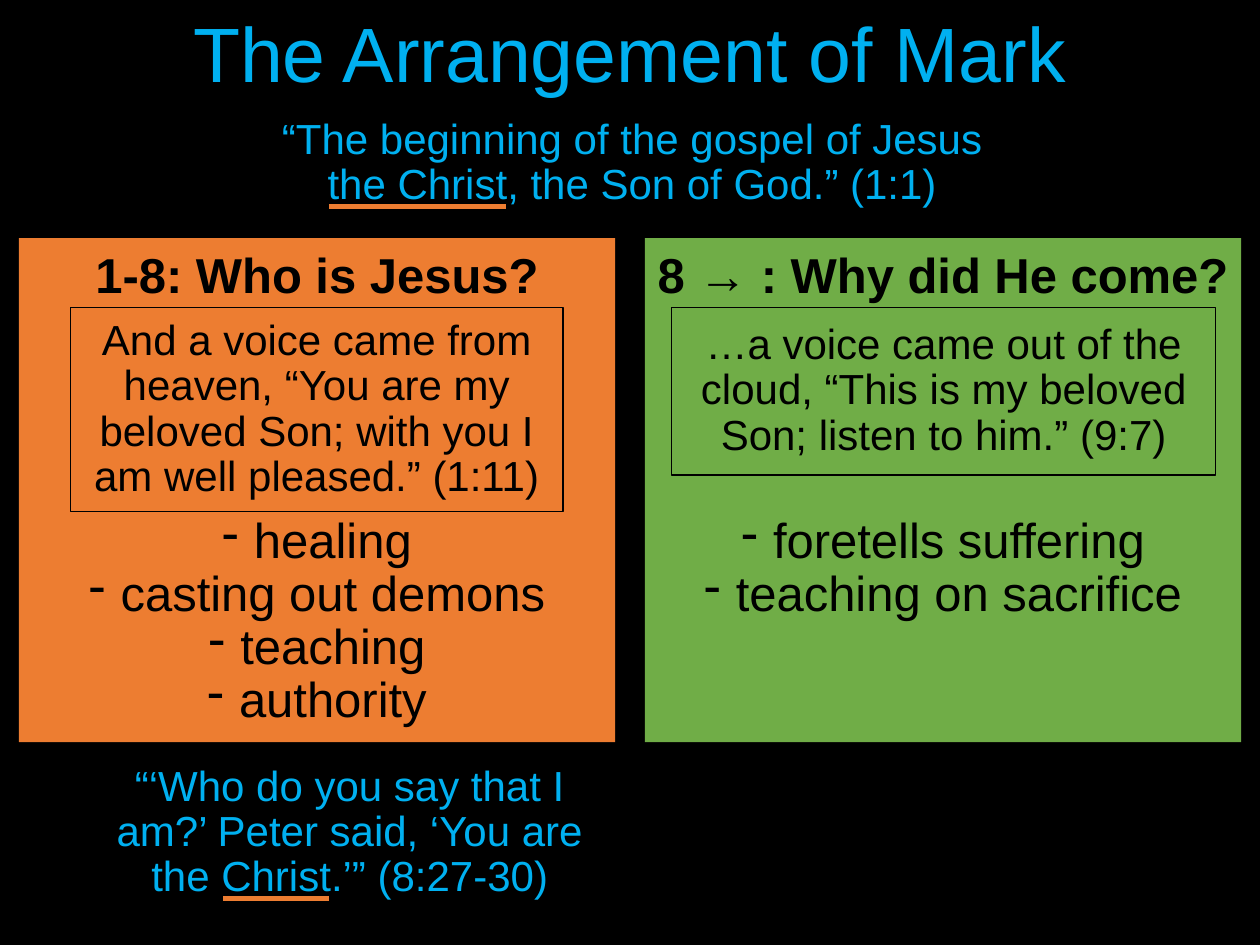
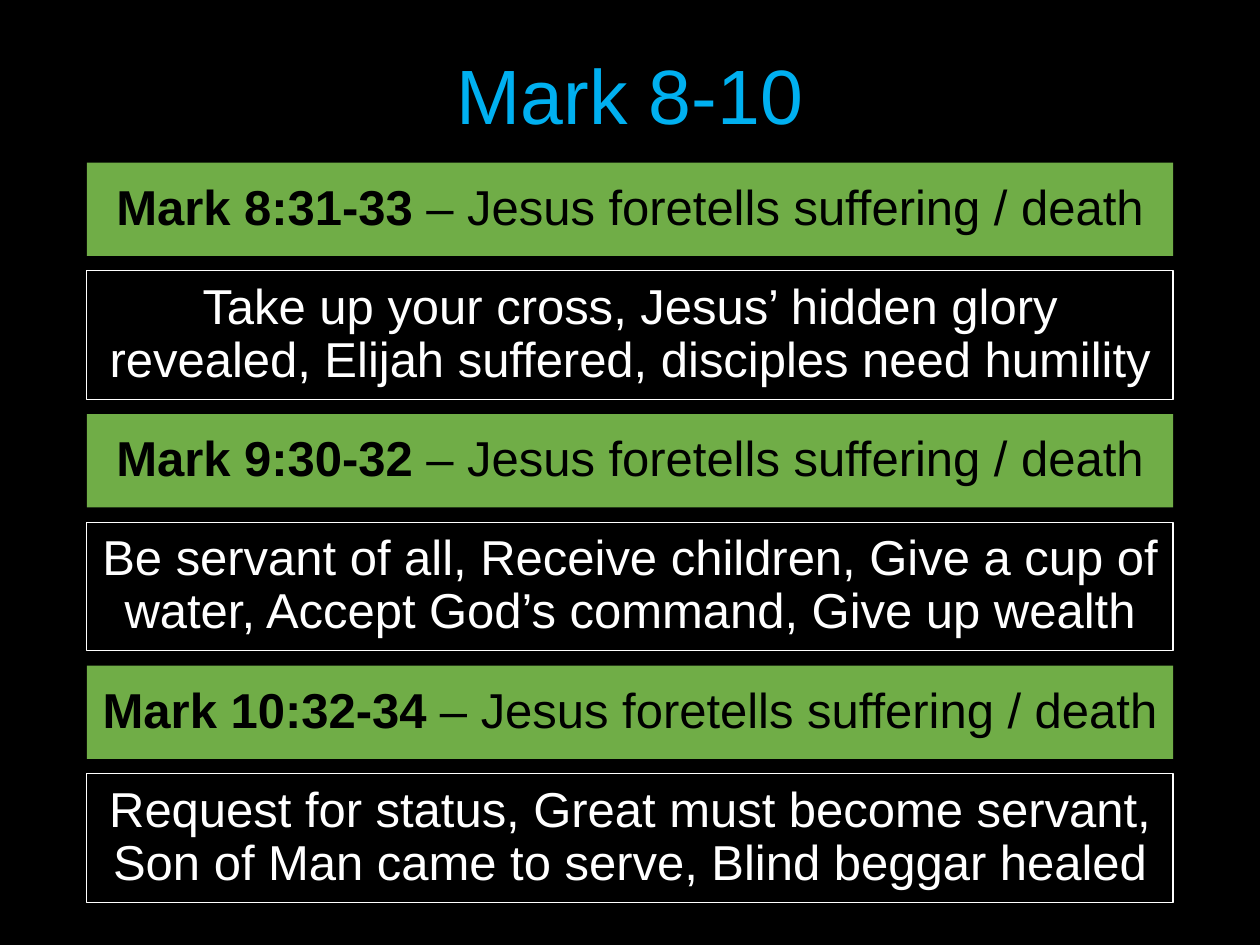
from pptx import Presentation
from pptx.dml.color import RGBColor
from pptx.enum.shapes import MSO_CONNECTOR, MSO_SHAPE
from pptx.enum.text import MSO_ANCHOR, MSO_AUTO_SIZE, PP_ALIGN
from pptx.oxml.ns import qn
from pptx.util import Cm, Pt
from lxml.etree import SubElement

BLACK = RGBColor(0x00, 0x00, 0x00)
WHITE = RGBColor(0xFF, 0xFF, 0xFF)
BLUE = RGBColor(0x00, 0xB0, 0xF0)
ORANGE = RGBColor(0xED, 0x7D, 0x31)
GREEN = RGBColor(0x70, 0xAD, 0x47)

FONT = "Arial"
TITLE_SIZE, LARGE, MEDIUM = 44, 28, 24
LEFT, WIDTH = 1.75, 21.9  # main column, in cm


class Builder:
    """Holds the shared style and the slide being built."""

    def __init__(self):
        self.deck = Presentation()
        self.deck.slide_width, self.deck.slide_height = Cm(25.4), Cm(19.05)
        self.page = None

    def new_page(self, title, top):
        self.page = self.deck.slides.add_slide(self.deck.slide_layouts[5])
        background = self.page.background.fill
        background.solid()
        background.fore_color.rgb = BLACK
        box = self.page.shapes.title
        box.left, box.top, box.width, box.height = map(Cm, (LEFT, top, WIDTH, 1.96))
        self.fill_text(box, title, TITLE_SIZE, BLUE)

    def style(self, para, size, color, bold=None):
        para.alignment = PP_ALIGN.CENTER
        para.line_spacing = 0.9
        para.font.name = FONT
        para.font.size = Pt(size)
        para.font.color.rgb = color
        para.font.bold = bold

    def fill_text(self, box, text, size, color, bold=None):
        frame = box.text_frame
        frame.word_wrap = True
        frame.auto_size = MSO_AUTO_SIZE.NONE
        frame.vertical_anchor = MSO_ANCHOR.MIDDLE
        para = frame.paragraphs[0]
        para.text = text
        self.style(para, size, color, bold)
        return para

    def quote(self, place, text):
        box = self.page.shapes.add_textbox(*map(Cm, place))
        self.fill_text(box, text, MEDIUM, BLUE)

    def rectangle(self, place, fill=None, line=None):
        box = self.page.shapes.add_shape(MSO_SHAPE.RECTANGLE, *map(Cm, place))
        box.shadow.inherit = False
        if fill is None:
            box.fill.background()
        else:
            box.fill.solid()
            box.fill.fore_color.rgb = fill
        if line is None:
            box.line.fill.background()
        else:
            box.line.color.rgb = line
            box.line.width = Pt(0.75)
        return box

    def outlined(self, place, text, size, color):
        self.fill_text(self.rectangle(place, line=color), text, size, color)

    def band(self, place, reference, summary):
        para = self.fill_text(self.rectangle(place, GREEN), "", LARGE, BLACK)
        span = para.add_run()
        span.text = reference
        span.font.bold = True
        para.add_run().text = f" – {summary}"

    def panel(self, place, fill, heading, points):
        box = self.rectangle(place, fill)
        self.fill_text(box, heading, LARGE, BLACK, bold=True)
        frame = box.text_frame
        frame.vertical_anchor = MSO_ANCHOR.TOP
        frame.margin_left = frame.margin_right = Cm(0.2)
        frame.margin_top = Cm(0.27)
        for index, point in enumerate(points):
            para = frame.add_paragraph()
            para.text = point
            self.bullet(para)
            self.style(para, LARGE, BLACK, bold=False)
            # Room for the verse box between heading and list
            para.space_before = Pt(0 if index else 121)

    def bullet(self, para):
        properties = para._p.get_or_add_pPr()
        properties.set("marL", str(Cm(0.64)))
        properties.set("indent", str(Cm(-0.64)))
        SubElement(properties, qn("a:buFontTx"))
        SubElement(properties, qn("a:buChar")).set("char", "-")

    def underline(self, left, right, top):
        line = self.page.shapes.add_connector(
            MSO_CONNECTOR.STRAIGHT, Cm(left), Cm(top), Cm(right), Cm(top))
        line.line.color.rgb = ORANGE
        line.line.width = Pt(3)
        SubElement(line._element.spPr, qn("a:effectLst"))


def build_arrangement(builder):
    builder.new_page("The Arrangement of Mark", 0.18)

    # Opening and closing quotes
    builder.quote((5.38, 2.29, 14.73, 2),
                  "“The beginning of the gospel of Jesus the Christ, the Son of God.” (1:1)")
    builder.quote((LEFT, 15.29, 10.6, 3),
                  "“‘Who do you say that I am?’ Peter said, ‘You are the Christ.’” (8:27-30)")
    builder.underline(6.63, 10.21, 4.17)
    builder.underline(4.5, 6.63, 18.11)

    # The two halves of the book
    builder.panel((0.38, 4.8, 12.02, 10.16), ORANGE, "1-8: Who is Jesus?",
                  ["healing", "casting out demons", "teaching", "authority"])
    builder.panel((13, 4.8, 12.02, 10.16), GREEN, "8 → : Why did He come?",
                  ["foretells suffering", "teaching on sacrifice"])

    # Verse boxes
    builder.outlined((1.42, 6.2, 9.93, 4.12),
                     "And a voice came from heaven, “You are my beloved Son; "
                     "with you I am well pleased.” (1:11)", MEDIUM, BLACK)
    builder.outlined((13.54, 6.2, 10.97, 3.38),
                     "…a voice came out of the cloud, “This is my beloved Son; "
                     "listen to him.” (9:7)", MEDIUM, BLACK)


def build_predictions(builder):
    builder.new_page("Mark 8-10", 1.02)
    passages = [
        ("Mark 8:31-33", "Take up your cross, Jesus’ hidden glory revealed, "
                         "Elijah suffered, disciples need humility"),
        ("Mark 9:30-32", "Be servant of all, Receive children, Give a cup of water, "
                         "Accept God’s command, Give up wealth"),
        ("Mark 10:32-34", "Request for status, Great must become servant, "
                          "Son of Man came to serve, Blind beggar healed"),
    ]
    # Each prediction band is followed by its lessons
    for index, (reference, lessons) in enumerate(passages):
        top = 3.28 + 5.07 * index
        builder.band((LEFT, top, WIDTH, 1.88), reference,
                     "Jesus foretells suffering / death")
        builder.outlined((LEFT, top + 2.18, WIDTH, 2.59), lessons, LARGE, WHITE)


def main():
    builder = Builder()
    build_arrangement(builder)
    build_predictions(builder)
    builder.deck.save("out.pptx")


if __name__ == "__main__":
    main()
